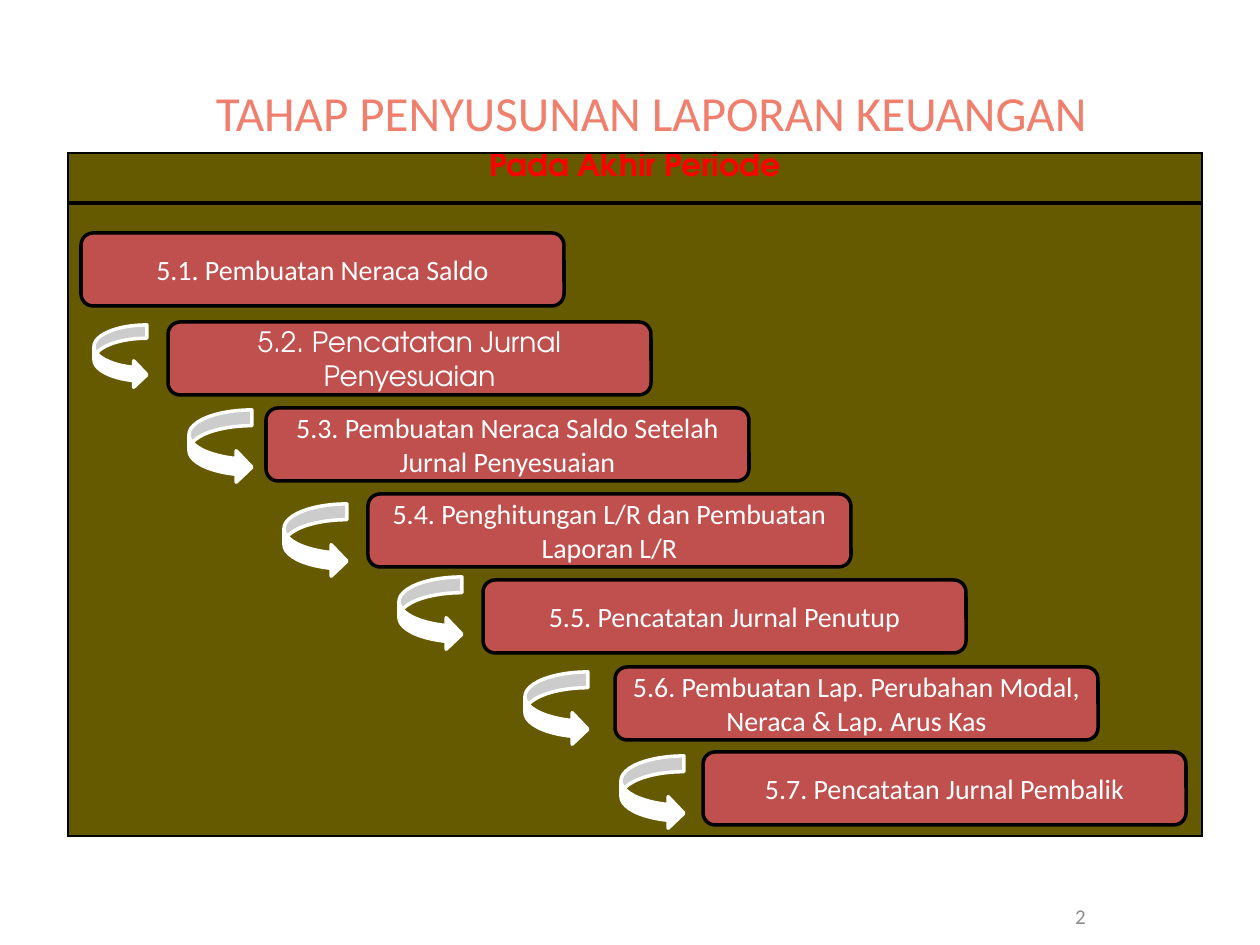
import pptx
import pptx.util
from lxml import etree
from pptx.dml.color import RGBColor
from pptx.enum.shapes import MSO_SHAPE
from pptx.enum.text import MSO_ANCHOR, PP_ALIGN
from pptx.oxml.ns import qn

EMU_PER_PX = 914400 / 126

OLIVE = RGBColor(0x66, 0x5A, 0x00)
BRICK = RGBColor(0xC0, 0x50, 0x4D)
CORAL = RGBColor(0xF0, 0x7F, 0x6D)
RED = RGBColor(0xFF, 0x00, 0x00)
GRAY = RGBColor(0x8C, 0x8C, 0x8C)
BLACK = RGBColor(0x00, 0x00, 0x00)
WHITE = RGBColor(0xFF, 0xFF, 0xFF)

BODY_FONT = "Calibri"
ACCENT_FONT = "TeX Gyre Adventor"

STEP_SIZE = (483, 73)
STEPS = [
    # left, top, font, label
    (81, 233, BODY_FONT, "5.1. Pembuatan Neraca Saldo"),
    (168, 322, ACCENT_FONT, "5.2. Pencatatan Jurnal Penyesuaian"),
    (266, 408, BODY_FONT, "5.3. Pembuatan Neraca Saldo Setelah Jurnal Penyesuaian"),
    (368, 494, BODY_FONT, "5.4. Penghitungan L/R dan Pembuatan Laporan L/R"),
    (483, 580, BODY_FONT, "5.5. Pencatatan Jurnal Penutup"),
    (615, 667, BODY_FONT, "5.6. Pembuatan Lap. Perubahan Modal, Neraca & Lap. Arus Kas"),
    (703, 752, BODY_FONT, "5.7. Pencatatan Jurnal Pembalik"),
]
ARROWS = [
    # left, top, width, height
    (94, 325, 53, 63),
    (189, 410, 63, 73),
    (284, 504, 63, 73),
    (399, 577, 63, 73),
    (525, 672, 63, 73),
    (621, 756, 63, 73),
]


def px(length):
    return pptx.util.Emu(round(length * EMU_PER_PX))


def write_text(frame, text, *, size, color, font=BODY_FONT, bold=False,
               anchor=MSO_ANCHOR.MIDDLE):
    frame.word_wrap = True
    frame.vertical_anchor = anchor
    paragraph = frame.paragraphs[0]
    paragraph.alignment = PP_ALIGN.CENTER
    run = paragraph.add_run()
    run.text = text
    run.font.name = font
    run.font.size = pptx.util.Pt(size)
    run.font.bold = bold
    run.font.color.rgb = color


def add_outlined_shape(slide, kind, left, top, width, height, fill, line):
    shape = slide.shapes.add_shape(kind, px(left), px(top), px(width), px(height))
    shape.shadow.inherit = False
    shape.fill.solid()
    shape.fill.fore_color.rgb = fill
    shape.line.color.rgb = line
    shape.line.width = pptx.util.Pt(2)
    return shape


def style_cell(cell, top, bottom):
    """Fill a cell and give it black borders; top and bottom are in points."""
    cell.fill.solid()
    cell.fill.fore_color.rgb = OLIVE
    properties = cell._tc.get_or_add_tcPr()
    widths = {"a:lnL": 1, "a:lnR": 1, "a:lnT": top, "a:lnB": bottom}
    for position, (side, width) in enumerate(widths.items()):
        border = etree.Element(qn(side), w=str(pptx.util.Pt(width)))
        fill = etree.SubElement(border, qn("a:solidFill"))
        etree.SubElement(fill, qn("a:srgbClr"), val=str(BLACK))
        properties.insert(position, border)


def add_period_table(slide):
    table = slide.shapes.add_table(2, 1, px(68), px(153), px(1134), px(683)).table
    table.rows[0].height = px(50)
    table.rows[1].height = px(633)
    header, body = table.cell(0, 0), table.cell(1, 0)
    style_cell(header, top=1, bottom=3)
    style_cell(body, top=3, bottom=1)
    header.margin_top = header.margin_bottom = 0
    write_text(header.text_frame, "Pada Akhir Periode", size=18, color=RED,
               font=ACCENT_FONT, bold=True, anchor=MSO_ANCHOR.TOP)


def add_title(slide, text):
    title = slide.shapes.title
    title.left, title.top, title.width, title.height = px(63), px(56), px(1176), px(112)
    write_text(title.text_frame, text, size=28, color=CORAL)


def add_page_number(slide, number):
    box = slide.shapes.add_textbox(px(1046), px(893), px(69), px(42))
    write_text(box.text_frame, number, size=12, color=GRAY, anchor=MSO_ANCHOR.BOTTOM)


def add_step(slide, left, top, font, label):
    step = add_outlined_shape(slide, MSO_SHAPE.ROUNDED_RECTANGLE, left, top,
                              *STEP_SIZE, fill=BRICK, line=BLACK)
    write_text(step.text_frame, label, size=16, color=WHITE, font=font)


def main():
    presentation = pptx.Presentation()
    presentation.slide_width, presentation.slide_height = px(1260), px(945)
    slide = presentation.slides.add_slide(presentation.slide_layouts[5])

    add_page_number(slide, "2")
    add_period_table(slide)
    for step in STEPS:
        add_step(slide, *step)
    for arrow in ARROWS:
        add_outlined_shape(slide, MSO_SHAPE.CURVED_RIGHT_ARROW, *arrow,
                           fill=WHITE, line=WHITE)
    add_title(slide, "TAHAP PENYUSUNAN LAPORAN KEUANGAN")

    presentation.save("out.pptx")


if __name__ == "__main__":
    main()
